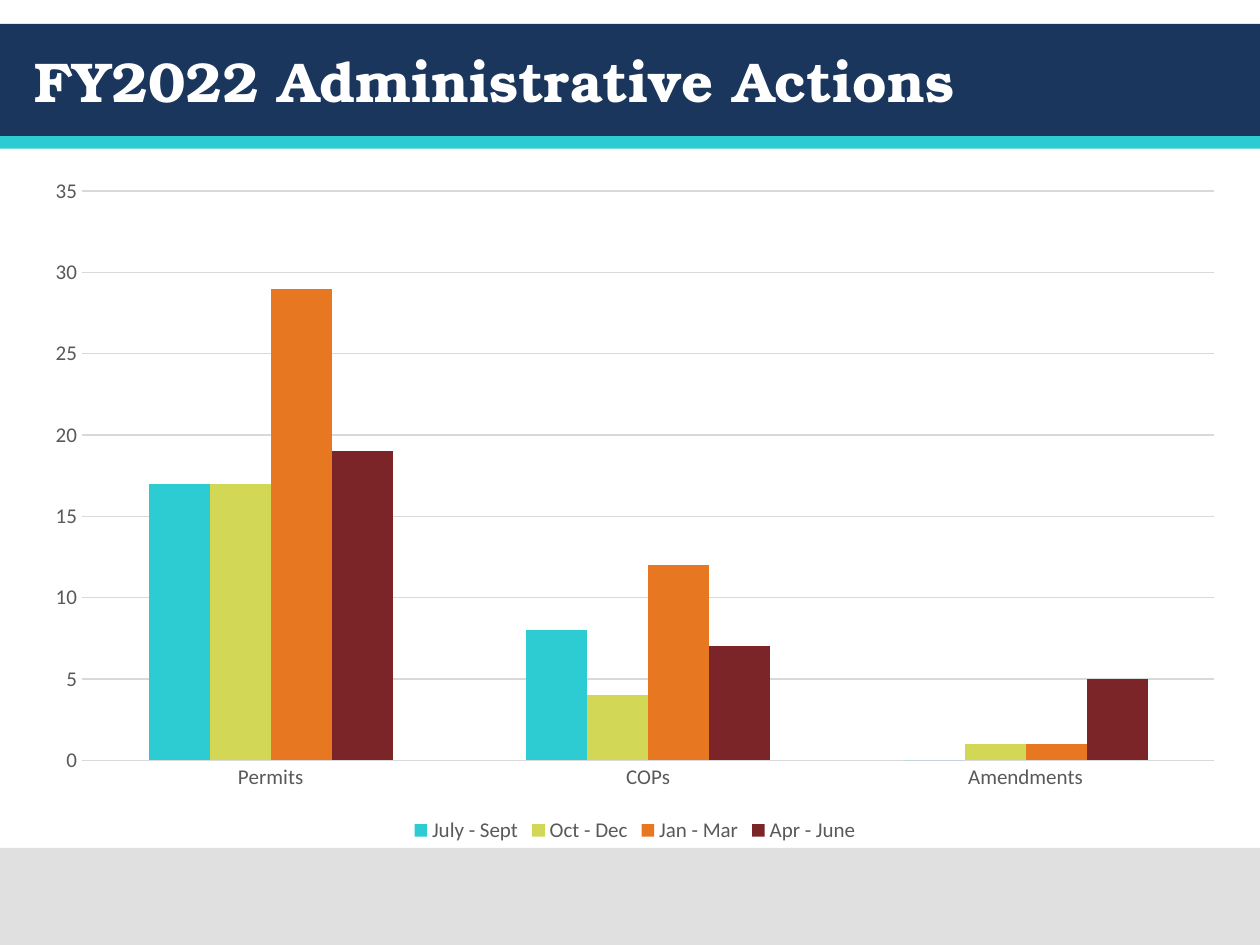
from pptx import Presentation
from pptx import util as u
from pptx.chart.data import CategoryChartData
from pptx.dml.color import RGBColor
from pptx.enum import chart as charts, shapes, text

# Content
TITLE = "FY2022 Administrative Actions"
ACTIONS = ["Permits", "COPs", "Amendments"]
QUARTERS = [
    ("July - Sept", (17, 8, 0), "2DCCD3"),
    ("Oct - Dec", (17, 4, 1), "D2D755"),
    ("Jan - Mar", (29, 12, 1), "E87722"),
    ("Apr - June", (19, 7, 5), "7C2529"),
]

THEME = {
    "navy": "1B365D", "teal": "2DCCD3", "footer": "E0E0E0",
    "white": "FFFFFF", "label": "595959", "grid": "D9D9D9",
    "title_font": "TeX Gyre Bonum", "chart_font": "Calibri",
    "title_size": 32, "label_size": 12, "line": 0.75,
}

# Layout in inches: full-width bands as (top, height, colour)
WIDTH, HEIGHT = 10, 7.5
HEADER_TOP, HEADER_HEIGHT, STRIPE_HEIGHT, FOOTER_TOP = 0.19, 0.89, 0.1, 6.73
BANDS = [
    (HEADER_TOP, HEADER_HEIGHT, "navy"),
    (HEADER_TOP + HEADER_HEIGHT, STRIPE_HEIGHT, "teal"),
    (FOOTER_TOP, HEIGHT - FOOTER_TOP, "footer"),
]
TITLE_MARGIN = 0.17
CHART_LEFT, CHART_TOP, CHART_WIDTH = 0.25, 1.31, 9.58


def color(name):
    return RGBColor.from_string(THEME.get(name, name))


def paint(fill, name):
    fill.solid()
    fill.fore_color.rgb = color(name)


def style_font(font, family, size, name, bold=False):
    font.name = THEME[family]
    font.size = u.Pt(THEME[size])
    font.color.rgb = color(name)
    font.bold = bold


def style_line(line):
    line.color.rgb = color("grid")
    line.width = u.Pt(THEME["line"])


def add_bands(page):
    for top, height, name in BANDS:
        band = page.shapes.add_shape(shapes.MSO_SHAPE.RECTANGLE, 0, u.Inches(top),
                                     u.Inches(WIDTH), u.Inches(height))
        band.shadow.inherit = False
        paint(band.fill, name)
        band.line.fill.background()


def place_title(page):
    title = page.shapes.title
    title.left, title.top = u.Inches(TITLE_MARGIN), u.Inches(HEADER_TOP)
    title.width = u.Inches(WIDTH - 2 * TITLE_MARGIN)
    title.height = u.Inches(HEADER_HEIGHT)
    frame = title.text_frame
    frame.text = TITLE
    frame.word_wrap = True
    frame.vertical_anchor = text.MSO_ANCHOR.MIDDLE
    para = frame.paragraphs[0]
    para.alignment = text.PP_ALIGN.LEFT
    style_font(para.runs[0].font, "title_font", "title_size", "white", bold=True)
    # Bring the title in front of the header band
    title.element.getparent().append(title.element)


def add_actions_chart(page):
    data = CategoryChartData()
    data.categories = ACTIONS
    for name, values, _ in QUARTERS:
        data.add_series(name, values)
    chart = page.shapes.add_chart(
        charts.XL_CHART_TYPE.COLUMN_CLUSTERED, u.Inches(CHART_LEFT), u.Inches(CHART_TOP),
        u.Inches(CHART_WIDTH), u.Inches(FOOTER_TOP - CHART_TOP), data).chart
    chart.has_title = False
    style_font(chart.font, "chart_font", "label_size", "label")

    # Columns
    plot = chart.plots[0]
    plot.gap_width, plot.overlap = 219, 0
    plot.vary_by_categories = False
    for series, (_, _, fill) in zip(plot.series, QUARTERS):
        paint(series.format.fill, fill)

    # Axes
    for axis in (chart.category_axis, chart.value_axis):
        axis.major_tick_mark = axis.minor_tick_mark = charts.XL_TICK_MARK.NONE
        style_font(axis.tick_labels.font, "chart_font", "label_size", "label")
    style_line(chart.category_axis.format.line)
    values = chart.value_axis
    values.minimum_scale, values.maximum_scale, values.major_unit = 0, 35, 5
    values.format.line.fill.background()
    style_line(values.major_gridlines.format.line)

    # Legend
    chart.has_legend = True
    chart.legend.position = charts.XL_LEGEND_POSITION.BOTTOM
    chart.legend.include_in_layout = False
    style_font(chart.legend.font, "chart_font", "label_size", "label")


def main():
    deck = Presentation()
    deck.slide_width, deck.slide_height = u.Inches(WIDTH), u.Inches(HEIGHT)
    page = deck.slides.add_slide(deck.slide_layouts.get_by_name("Title Only"))
    paint(page.background.fill, "white")
    add_bands(page)
    place_title(page)
    add_actions_chart(page)
    deck.save("out.pptx")


if __name__ == "__main__":
    main()
